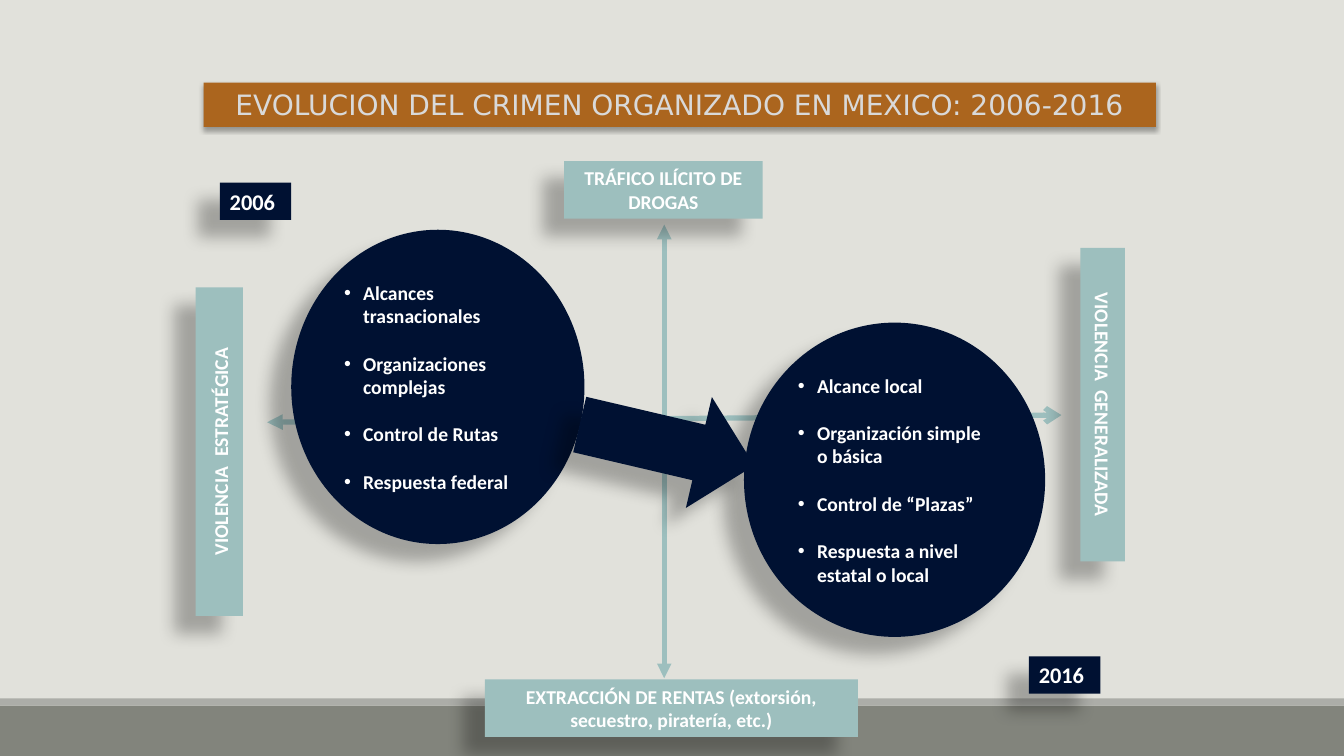
"""Build a slide on how organised crime changed in Mexico between 2006 and 2016."""
from lxml import etree
from pptx import Presentation
from pptx import util as u
from pptx.dml import color
from pptx.enum import shapes, text
from pptx.oxml import ns

NAVY, TEAL, WHITE = "001132", "9DBFBE", "FFFFFF"
SOFT = dict(alpha=28, blur=11.8, dist=19.7, angle=141)
CRISP = dict(alpha=32, blur=3.5, dist=2.2, angle=90)


def rgb(value):
    return color.RGBColor.from_string(value)


def child(parent, tag, **attributes):
    values = {key: str(value) for key, value in attributes.items()}
    return etree.SubElement(parent, ns.qn(tag), values)


def write(para, content, size=14, font="Calibri", ink=WHITE, bold=True):
    span = para.add_run()
    span.text = content
    span.font.size, span.font.name, span.font.bold = u.Pt(size), font, bold
    span.font.color.rgb = rgb(ink)


class Diagram:
    def __init__(self, page):
        self.page = page
        page.background.fill.solid()
        page.background.fill.fore_color.rgb = rgb("E1E1DB")

    def shape(self, kind, place, fill, shadow=None):
        box = self.page.shapes.add_shape(kind, *map(u.Cm, place))
        box.fill.solid()
        box.fill.fore_color.rgb = rgb(fill)
        box.line.fill.background()
        box.shadow.inherit = False
        if shadow:
            effects = box._element.spPr.find(ns.qn("a:effectLst"))
            outer = child(effects, "a:outerShdw", blurRad=u.Pt(shadow["blur"]),
                          dist=u.Pt(shadow["dist"]), dir=shadow["angle"] * 60000,
                          algn="ctr", rotWithShape=0)
            tint = child(outer, "a:srgbClr", val="000000")
            child(tint, "a:alpha", val=shadow["alpha"] * 1000)
        box.text_frame.word_wrap = True
        box.text_frame.vertical_anchor = text.MSO_ANCHOR.MIDDLE
        return box

    def label(self, place, fill, spans, align="CENTER", turn=None, shadow=SOFT, **style):
        box = self.shape(shapes.MSO_SHAPE.RECTANGLE, place, fill, shadow)
        if turn:
            box.text_frame._txBody.bodyPr.set("vert", turn)
        para = box.text_frame.paragraphs[0]
        para.alignment = getattr(text.PP_ALIGN, align)
        for content, size in spans:
            write(para, content, size, **style)

    def circle(self, place, items):
        frame = self.shape(shapes.MSO_SHAPE.OVAL, place, NAVY, SOFT).text_frame
        for index, item in enumerate(items):
            para = frame.add_paragraph() if index else frame.paragraphs[0]
            para.alignment = text.PP_ALIGN.LEFT
            para.space_before = u.Pt(17 if index else 0)
            properties = para._p.get_or_add_pPr()
            properties.set("marL", str(u.Cm(0.48)))
            properties.set("indent", str(u.Cm(-0.48)))
            child(properties, "a:buFont", typeface="Arial")
            child(properties, "a:buChar", char="•")
            write(para, item)

    def axis(self, ends, width, tail):
        line = self.page.shapes.add_connector(shapes.MSO_CONNECTOR.STRAIGHT, *map(u.Cm, ends))
        line.line.color.rgb = rgb(TEAL)
        line.line.width = u.Pt(width)
        stroke = line.line._get_or_add_ln()
        child(stroke, "a:headEnd", type="triangle")
        child(stroke, "a:tailEnd", type=tail)
        child(line._element.spPr, "a:effectLst")


def main():
    deck = Presentation()
    deck.slide_width, deck.slide_height = u.Cm(33.87), u.Cm(19.05)
    diagram = Diagram(deck.slides.add_slide(deck.slide_layouts[6]))

    diagram.shape(shapes.MSO_SHAPE.RECTANGLE, (0, 17.78, 33.87, 1.27), "82847C")
    diagram.shape(shapes.MSO_SHAPE.RECTANGLE, (0, 17.6, 33.87, 0.18), "ACADA8")
    diagram.label((5.13, 2.08, 24, 1.12), "AB651E",
                  [("EVOLUCION DEL CRIMEN ORGANIZADO EN MEXICO: 2006-2016", 20)],
                  shadow=CRISP, font="DejaVu Sans", ink="D9D9D9", bold=False)

    diagram.axis((16.74, 17.09, 16.74, 5.66), 3.5, "triangle")
    diagram.axis((6.73, 10.64, 26.75, 10.46), 3.75, "arrow")

    diagram.label((14.22, 4.06, 5, 1.45), TEAL, [("TRÁFICO ILÍCITO DE DROGAS", 14)])
    diagram.label((12.22, 17.12, 9.4, 1.45), TEAL,
                  [("EXTRACCIÓN DE RENTAS (extorsión, secuestro, piratería, etc.)", 14)])
    diagram.label((4.93, 7.24, 1.19, 8.28), TEAL,
                  [("VIOLENCIA", 14), ("  ", 16), ("ESTRATÉGICA", 14)], turn="vert270")
    diagram.label((27.23, 6.25, 1.12, 7.9), TEAL,
                  [("VIOLENCIA  GENERALIZADA", 14)], turn="vert")

    diagram.circle((7.34, 5.79, 7.39, 7.92),
                   ["Alcances trasnacionales", "Organizaciones complejas",
                    "Control de Rutas", "Respuesta federal"])
    for year, left, top in (("2006", 5.54, 4.6), ("2016", 25.93, 16.54)):
        diagram.label((left, top, 1.8, 0.94), NAVY, [(year, 16)], align="LEFT")
    diagram.circle((18.75, 8.13, 7.59, 7.92),
                   ["Alcance local", "Organización simple o básica",
                    "Control de “Plazas”", "Respuesta a nivel estatal o local"])
    arrow = diagram.shape(shapes.MSO_SHAPE.RIGHT_ARROW, (14.55, 9.78, 4.52, 2.87), NAVY, SOFT)
    arrow.rotation = 13.2

    deck.save("out.pptx")


if __name__ == "__main__":
    main()
